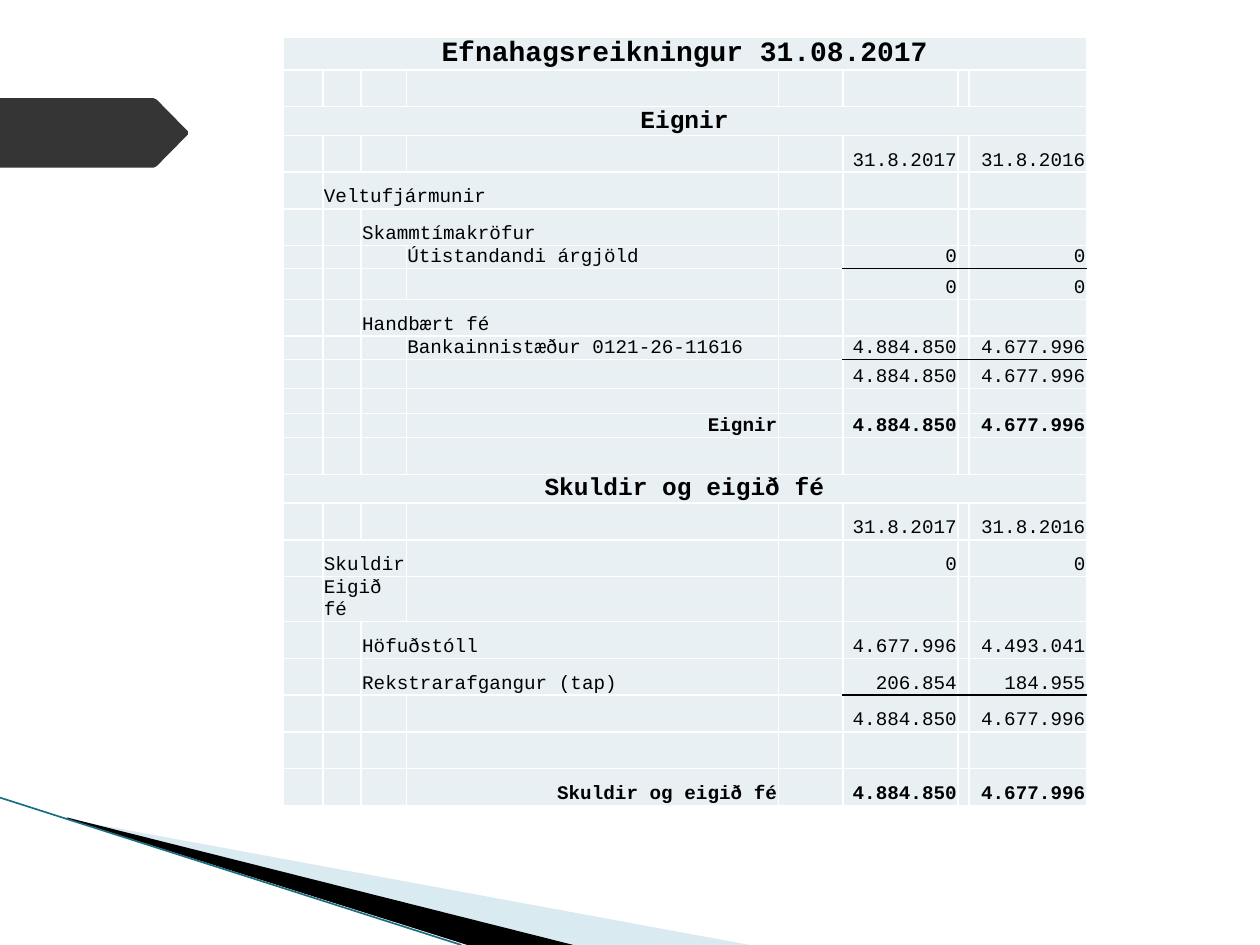
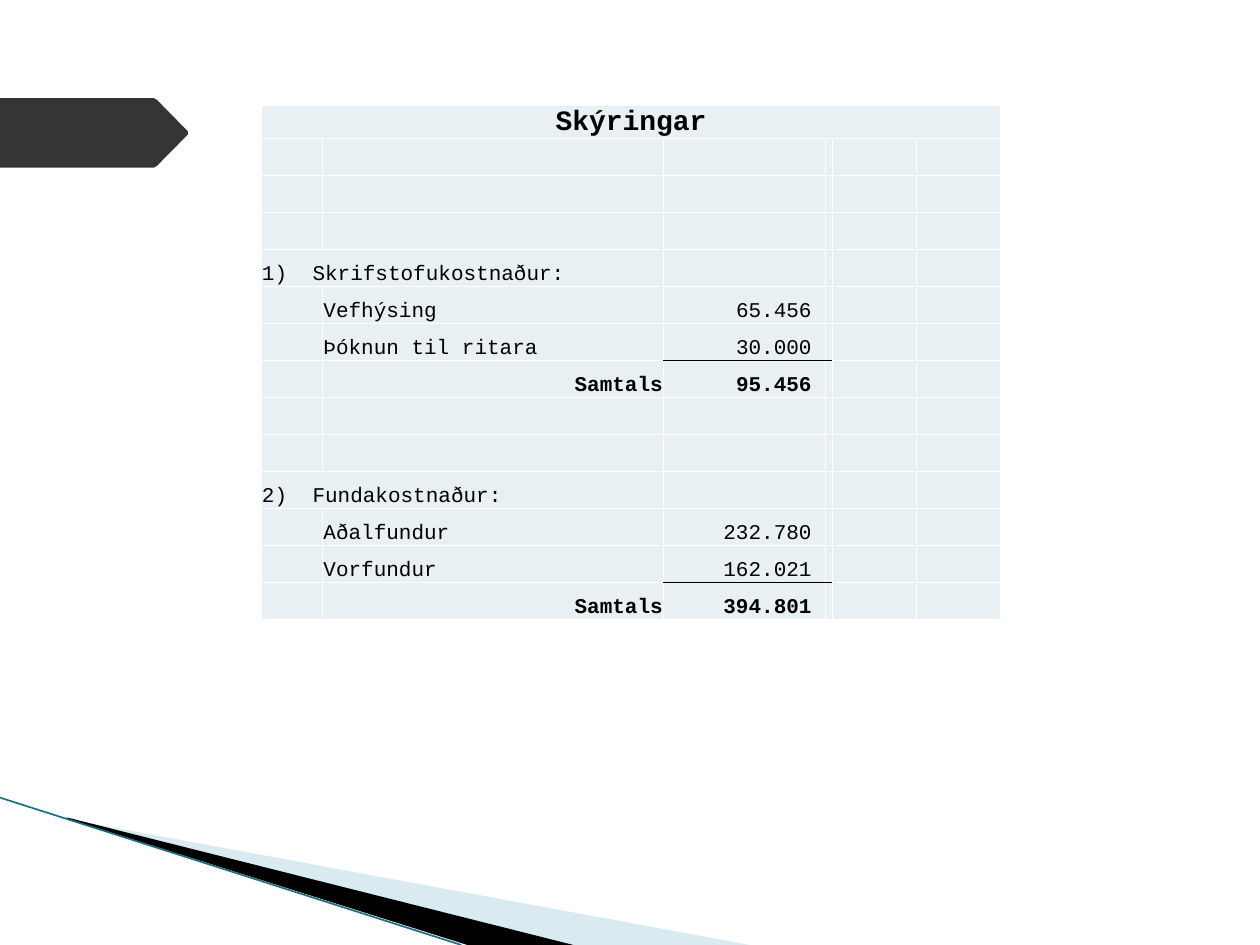
from dataclasses import dataclass

from lxml import etree
from pptx import Presentation
from pptx.dml.color import RGBColor
from pptx.enum.shapes import MSO_CONNECTOR
from pptx.enum.text import MSO_ANCHOR, PP_ALIGN
from pptx.oxml.ns import qn
from pptx.util import Cm, Pt

LEFT, MID, RIGHT = PP_ALIGN.LEFT, PP_ALIGN.CENTER, PP_ALIGN.RIGHT
BOTTOM = MSO_ANCHOR.BOTTOM
STRAIGHT = MSO_CONNECTOR.STRAIGHT

COLORS = {
    "ink": "000000",
    "grid": "FFFFFF",
    "cell": "E8F0F4",
    "arrow": "353535",
    "pale": "A0CBDC",
    "edge": "1C6F82",
}
FONT = "Courier New"
CELL = {
    "margin_left": Cm(0.02),
    "margin_right": Cm(0.02),
    "margin_top": Cm(0.02),
    "margin_bottom": Cm(0),
    "vertical_anchor": BOTTOM,
}
STYLES = {
    "title": {"size": Pt(16), "bold": True},
    "part": {"size": Pt(14), "bold": True},
    "small": {"size": Pt(11), "bold": False},
    "small sum": {"size": Pt(11), "bold": True},
    "note": {"size": Pt(12), "bold": False},
    "note sum": {"size": Pt(12), "bold": True},
}
LINE = 0.74
TIGHT = 0.46
NOTE = 9.7 / 13
TAB = Cm(1.02)


@dataclass(frozen=True)
class Item:
    col: int
    text: str
    span: int = 1
    align: PP_ALIGN = LEFT
    pad: float = 0.02


@dataclass(frozen=True)
class Row:
    high: float
    items: tuple[Item, ...] = ()
    style: str = "small"
    ruled: bool = False


@dataclass(frozen=True)
class Sheet:
    """A table; rules run under the columns listed in sums."""
    left: float
    top: float
    cols: tuple[float, ...]
    sums: tuple[int, ...]
    rows: tuple[Row, ...]


@dataclass(frozen=True)
class Outline:
    color: str
    points: tuple[tuple[float, float], ...]
    alpha: int = 100


OUTLINES = (
    Outline("pale", ((1.4, 16.52), (15.11, 19.05), (11.58, 19.05)), 40),
    Outline("ink", ((1.35, 16.48), (11.56, 19.05), (9.42, 19.05), (1.37, 16.51))),
    Outline("arrow", ((0, 1.98), (3.1, 1.98), (3.16, 2.01), (3.79, 2.65),
                      (3.79, 2.71), (3.16, 3.35), (3.1, 3.38), (0, 3.38))),
)


def years(now: str, then: str) -> tuple[Item, Item]:
    return Item(5, now, align=RIGHT), Item(7, then, align=RIGHT)


def note(label: str, value: str, ruled: bool = False) -> Row:
    return Row(NOTE, (Item(1, label), Item(2, value, align=RIGHT, pad=0.28)),
               "note", ruled)


def total(value: str) -> Row:
    return Row(NOTE, (Item(1, "Samtals", align=RIGHT),
                      Item(2, value, align=RIGHT, pad=0.28)), "note sum")


def head(high: float, text: str, span: int, style: str) -> Row:
    return Row(high, (Item(0, text, span, MID),), style)


DATES = Row(LINE, years("31.8.2017", "31.8.2016"))
SUMS = years("4.884.850", "4.677.996")
GAP = Row(NOTE, style="note")

BALANCE = Sheet(5.7, 0.75, (0.81, 0.77, 0.91, 7.5, 1.3, 2.32, 0.22, 2.37), (5, 6, 7), (
    head(0.62, "Efnahagsreikningur 31.08.2017", 8, "title"),
    Row(LINE),
    head(0.57, "Eignir", 8, "part"),
    DATES,
    Row(LINE, (Item(1, "Veltufjármunir", 3),)),
    Row(LINE, (Item(2, "Skammtímakröfur", 2),)),
    Row(TIGHT, (Item(3, "Útistandandi árgjöld"), *years("0", "0")), ruled=True),
    Row(0.62, years("0", "0")),
    Row(LINE, (Item(2, "Handbært fé", 2),)),
    Row(TIGHT, (Item(3, "Bankainnistæður 0121-26-11616"), *SUMS), ruled=True),
    Row(0.59, SUMS),
    Row(0.5),
    Row(0.49, (Item(3, "Eignir", align=RIGHT), *SUMS), "small sum"),
    Row(LINE),
    head(0.57, "Skuldir og eigið fé", 8, "part"),
    DATES,
    Row(LINE, (Item(1, "Skuldir", 2), *years("0", "0"))),
    Row(0.91, (Item(1, "Eigið fé", 2),)),
    Row(LINE, (Item(2, "Höfuðstóll", 2), *years("4.677.996", "4.493.041"))),
    Row(LINE, (Item(2, "Rekstrarafgangur (tap)", 2),
               *years("206.854", "184.955")), ruled=True),
    Row(LINE, SUMS),
    Row(LINE),
    Row(LINE, (Item(3, "Skuldir og eigið fé", align=RIGHT), *SUMS), "small sum"),
))

NOTES = Sheet(5.26, 2.13, (1.24, 6.88, 3.26, 0.14, 1.7, 1.7), (2, 3), (
    head(0.65, "Skýringar", 6, "title"),
    GAP, GAP, GAP,
    Row(NOTE, (Item(0, "1)\tSkrifstofukostnaður:", 2),), "note"),
    note("Vefhýsing", "65.456"),
    note("Þóknun til ritara", "30.000", True),
    total("95.456"),
    GAP, GAP,
    Row(NOTE, (Item(0, "2)\tFundakostnaður:", 2),), "note"),
    note("Aðalfundur", "232.780"),
    note("Vorfundur", "162.021", True),
    total("394.801"),
))


def rgb(name: str) -> RGBColor:
    return RGBColor.from_string(COLORS[name])


def draw_outline(slide, shape: Outline) -> None:
    first, *rest = [(Cm(x), Cm(y)) for x, y in shape.points]
    pen = slide.shapes.build_freeform(*first, scale=1.0)
    pen.add_line_segments(rest, close=True)
    form = pen.convert_to_shape()
    form.shadow.inherit = False
    form.fill.solid()
    form.fill.fore_color.rgb = rgb(shape.color)
    form.line.fill.background()
    if shape.alpha < 100:
        tone = form._element.spPr.find(".//" + qn("a:srgbClr"))
        etree.SubElement(tone, qn("a:alpha"), val=str(shape.alpha * 1000))


def draw_decor(slide) -> None:
    *wedges, arrow = OUTLINES
    for wedge in wedges:
        draw_outline(slide, wedge)
    edge = slide.shapes.add_connector(STRAIGHT, Cm(0), Cm(16.08), Cm(9.3), Cm(19.05))
    edge.line.color.rgb = rgb("edge")
    edge.line.width = Pt(0.95)
    etree.SubElement(edge._element.spPr, qn("a:effectLst"))
    draw_outline(slide, arrow)


def set_border(cell, over: bool, under: bool) -> None:
    props = cell._tc.get_or_add_tcPr()
    for side, dark in {"L": False, "R": False, "T": over, "B": under}.items():
        line = etree.SubElement(props, qn(f"a:ln{side}"), w=str(Pt(1)))
        fill = etree.SubElement(line, qn("a:solidFill"))
        etree.SubElement(fill, qn("a:srgbClr"), val=COLORS["ink" if dark else "grid"])


def write(cell, item: Item, style: str) -> None:
    cell.margin_right = Cm(item.pad)
    para = cell.text_frame.paragraphs[0]
    para.alignment = item.align
    if "\t" in item.text:
        tabs = etree.SubElement(para._p.get_or_add_pPr(), qn("a:tabLst"))
        etree.SubElement(tabs, qn("a:tab"), pos=str(TAB), algn="l")
    run = para.add_run()
    run.text = item.text
    for key, value in {"name": FONT, **STYLES[style]}.items():
        setattr(run.font, key, value)
    run.font.color.rgb = rgb("ink")


def draw_sheet(slide, sheet: Sheet) -> None:
    wide, high = sum(sheet.cols), sum(row.high for row in sheet.rows)
    table = slide.shapes.add_table(len(sheet.rows), len(sheet.cols), Cm(sheet.left),
                                   Cm(sheet.top), Cm(wide), Cm(high)).table
    table.first_row = table.horz_banding = False
    for col, width in zip(table.columns, sheet.cols):
        col.width = Cm(width)
    above = False
    for r, row in enumerate(sheet.rows):
        table.rows[r].height = Cm(row.high)
        items = {item.col: item for item in row.items}
        for c in range(len(sheet.cols)):
            cell = table.cell(r, c)
            for key, value in CELL.items():
                setattr(cell, key, value)
            summed = c in sheet.sums
            set_border(cell, above and summed, row.ruled and summed)
            cell.fill.solid()
            cell.fill.fore_color.rgb = rgb("cell")
            if c in items:
                item = items[c]
                if item.span > 1:
                    cell.merge(table.cell(r, c + item.span - 1))
                write(cell, item, row.style)
            else:
                blank = cell.text_frame.paragraphs[0]._p
                etree.SubElement(blank, qn("a:endParaRPr"), sz="800")
        above = row.ruled


def main() -> None:
    deck = Presentation()
    deck.slide_width, deck.slide_height = Cm(25.4), Cm(19.05)
    for sheet in (BALANCE, NOTES):
        slide = deck.slides.add_slide(deck.slide_layouts[6])
        draw_decor(slide)
        draw_sheet(slide, sheet)
    deck.save("out.pptx")


if __name__ == "__main__":
    main()
